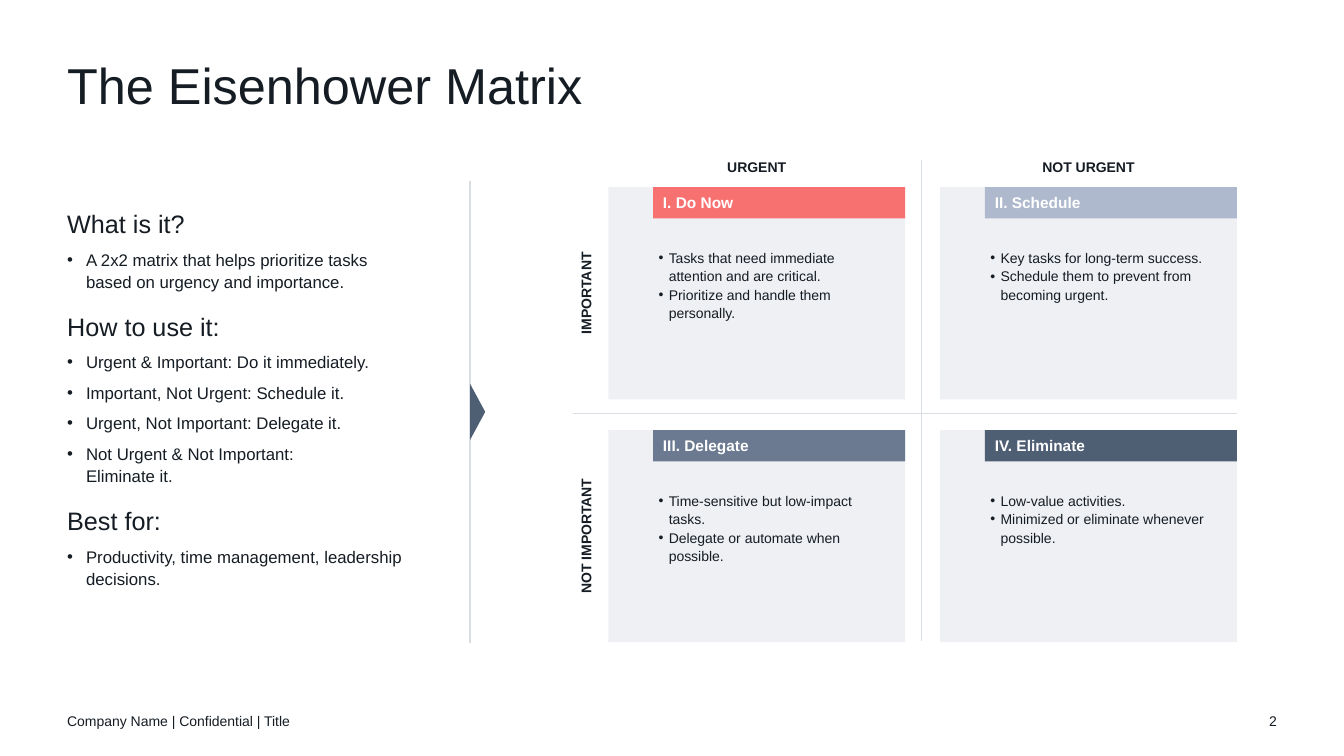
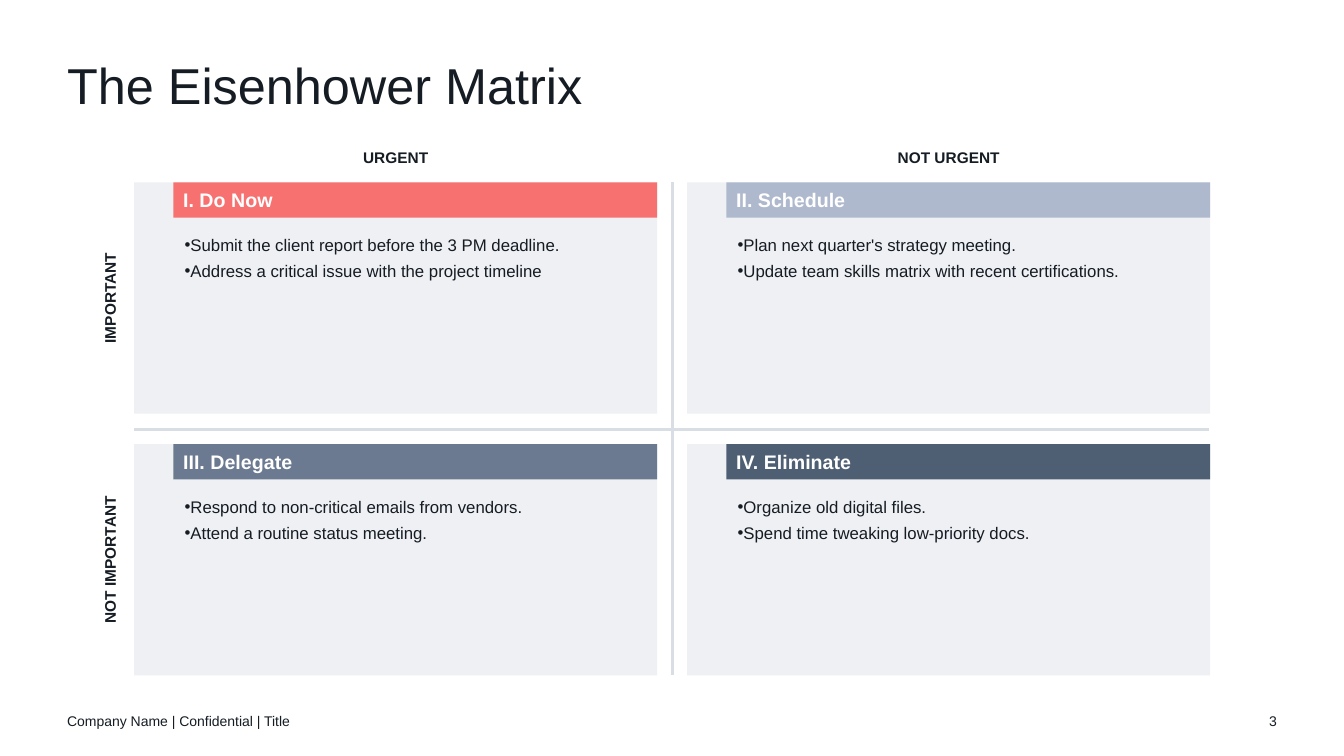
"""Build two Eisenhower Matrix slides: an overview and a worked example."""
from copy import deepcopy

from lxml import etree
from pptx import Presentation
from pptx.dml.color import RGBColor
from pptx.enum.shapes import MSO_CONNECTOR, MSO_SHAPE
from pptx.enum.text import MSO_ANCHOR, PP_ALIGN
from pptx.oxml.ns import qn
from pptx.util import Pt

INK = RGBColor(0x15, 0x1C, 0x23)
WHITE = RGBColor(0xFF, 0xFF, 0xFF)
PANEL = RGBColor(0xEE, 0xF0, 0xF4)
RULE = RGBColor(0xD9, 0xDE, 0xE5)
CORAL = RGBColor(0xF8, 0x71, 0x71)
MIST = RGBColor(0xAF, 0xB9, 0xCD)
SLATE = RGBColor(0x6B, 0x7A, 0x90)
NAVY = RGBColor(0x4E, 0x5E, 0x73)

RECT, TRIANGLE = MSO_SHAPE.RECTANGLE, MSO_SHAPE.ISOSCELES_TRIANGLE
STRAIGHT = MSO_CONNECTOR.STRAIGHT
TOP, MIDDLE = MSO_ANCHOR.TOP, MSO_ANCHOR.MIDDLE
LEFT, CENTER, RIGHT = PP_ALIGN.LEFT, PP_ALIGN.CENTER, PP_ALIGN.RIGHT

FONT = "Arial"
TITLE = "The Eisenhower Matrix"
FOOTER = "Company Name | Confidential | Title"
MARGIN = 48
QUADRANTS = [("I. Do Now", CORAL), ("II. Schedule", MIST),
             ("III. Delegate", SLATE), ("IV. Eliminate", NAVY)]
COLUMNS = ["URGENT", "NOT URGENT"]
ROWS = ["IMPORTANT", "NOT IMPORTANT"]

HEAD = {"size": 18, "para": {"line_spacing": 1.1, "space_before": Pt(12)}}
ITEM = {"size": 12, "bullet": (13.5, -13.5),
        "para": {"line_spacing": 1.1, "space_before": Pt(6)}}
GUIDE = [
    ("What is it?", HEAD),
    ("A 2x2 matrix that helps prioritize tasks based on urgency and importance.", ITEM),
    ("How to use it:", HEAD),
    ("Urgent & Important: Do it immediately.", ITEM),
    ("Important, Not Urgent: Schedule it.", ITEM),
    ("Urgent, Not Important: Delegate it.", ITEM),
    ("Not Urgent & Not Important:\vEliminate it.", ITEM),
    ("Best for:", HEAD),
    ("Productivity, time management, leadership decisions.", ITEM),
]

SLIDES = [
    {
        "number": 2, "origin": (434.5, 133.7), "cell": (212, 151.5), "pitch": (237, 173.5),
        "bar": (180, 22.3), "bar_size": 11, "label_size": 10, "column_y": 113, "row_x": 418.5,
        "rules": [(658.3, 114.5, 658.3, 458, 1), (409, 295.4, 883.5, 295.4, 1),
                  (335.6, 129.6, 335.6, 459.4, 1)],
        "insets": (36, 43.2, 14.4, 3.6),
        "item": {"size": 10, "bullet": (7.2, -7.2), "para": {"line_spacing": 1.1}},
        "items": [
            ["Tasks that need immediate attention and are critical.",
             "Prioritize and handle them personally."],
            ["Key tasks for long-term success.",
             "Schedule them to prevent from becoming urgent."],
            ["Time-sensitive but low-impact tasks.",
             "Delegate or automate when possible."],
            ["Low-value activities.",
             "Minimized or eliminate whenever possible."],
        ],
        "guide": GUIDE,
    },
    {
        "number": 3, "origin": (95.9, 130.2), "cell": (373.6, 165.3), "pitch": (395, 187),
        "bar": (345.7, 25.3), "bar_size": 14, "label_size": 11, "column_y": 106, "row_x": 78.5,
        "rules": [(480.2, 130.2, 480.2, 482.5, 2), (95.9, 306.7, 863.5, 306.7, 2)],
        "insets": (36, 36, 7.2, 3.6),
        "item": {"size": 12, "bullet": (0, -7.2),
                 "para": {"line_spacing": 1.1, "space_after": Pt(3)}},
        "items": [
            ["Submit the client report before the 3 PM deadline.",
             "Address a critical issue with the project timeline"],
            ["Plan next quarter's strategy meeting.",
             "Update team skills matrix with recent certifications."],
            ["Respond to non-critical emails from vendors.",
             "Attend a routine status meeting."],
            ["Organize old digital files.",
             "Spend time tweaking low-priority docs."],
        ],
        "guide": [],
    },
]


def write(sp, items, insets=(0, 0, 0, 0), anchor=TOP, align=LEFT, color=INK, bold=False):
    """Fill a shape with (text, style) paragraphs."""
    tf = sp.text_frame
    frame = dict(zip(("margin_left", "margin_top", "margin_right", "margin_bottom"),
                     map(Pt, insets)), word_wrap=True, vertical_anchor=anchor)
    for name, value in frame.items():
        setattr(tf, name, value)
    for i, (text, style) in enumerate(items):
        p = tf.paragraphs[0] if i == 0 else tf.add_paragraph()
        p.text = text
        p.alignment = align
        if "bullet" in style:
            pPr = p._p.get_or_add_pPr()
            for name, value in zip(("marL", "indent"), style["bullet"]):
                pPr.set(name, str(int(Pt(value))))
            etree.SubElement(pPr, qn("a:buFont")).set("typeface", FONT)
            etree.SubElement(pPr, qn("a:buChar")).set("char", "•")
        for name, value in style.get("para", {}).items():
            if i or name != "space_before":
                setattr(p, name, value)
        for r in p.runs:
            for name, value in {"name": FONT, "size": Pt(style["size"]), "bold": bold}.items():
                setattr(r.font, name, value)
            r.font.color.rgb = color
        for br in p._p.findall(qn("a:br")):
            br.insert(0, deepcopy(p.runs[0]._r.rPr))


def add_box(s, at, fill=None, kind=RECT):
    """Add a plain filled shape, or a text box when there is no fill."""
    at = [Pt(v) for v in at]
    if fill is None:
        return s.shapes.add_textbox(*at)
    sp = s.shapes.add_shape(kind, *at)
    sp.shadow.inherit = False
    sp.fill.solid()
    sp.fill.fore_color.rgb = fill
    sp.line.fill.background()
    return sp


prs = Presentation()
prs.slide_width, prs.slide_height = Pt(960), Pt(540)

for data in SLIDES:
    s = prs.slides.add_slide(prs.slide_layouts[5])
    title = s.shapes.title
    for name, value in {"left": MARGIN, "top": 43.2, "width": 864, "height": 43.2}.items():
        setattr(title, name, Pt(value))
    write(title, [(TITLE, {"size": 36, "para": {"line_spacing": 0.9}})])

    for text, x, w, align in [(FOOTER, MARGIN, 324, LEFT),
                              (str(data["number"]), 876, 36, RIGHT)]:
        write(add_box(s, (x, 500.4, w, 28.8)), [(text, {"size": 10})],
              anchor=MIDDLE, align=align)

    for x1, y1, x2, y2, weight in data["rules"]:
        line = s.shapes.add_connector(STRAIGHT, Pt(x1), Pt(y1), Pt(x2), Pt(y2))
        line.line.color.rgb = RULE
        line.line.width = Pt(weight)
        etree.SubElement(line._element.spPr, qn("a:effectLst"))

    (x0, y0), (w, h), (dx, dy) = data["origin"], data["cell"], data["pitch"]
    bar_w, bar_h = data["bar"]
    for i, (name, color) in enumerate(QUADRANTS):
        x, y = x0 + i % 2 * dx, y0 + i // 2 * dy
        write(add_box(s, (x, y, w, h), PANEL),
              [(text, data["item"]) for text in data["items"][i]], data["insets"])
        write(add_box(s, (x + w - bar_w, y, bar_w, bar_h), color),
              [(name, {"size": data["bar_size"]})], (7.2, 0, 7.2, 0),
              MIDDLE, color=WHITE, bold=True)

    label_w, label_h = 116, data["label_size"] * 1.2
    for i in range(2):
        column_x = x0 + i * dx + w / 2 - label_w / 2
        row_y = y0 + i * dy + h / 2 - label_h / 2
        for text, x, y, turn in [(COLUMNS[i], column_x, data["column_y"], 0),
                                 (ROWS[i], data["row_x"] - label_w / 2, row_y, 270)]:
            label = add_box(s, (x, y, label_w, label_h))
            label.rotation = turn
            write(label, [(text, {"size": data["label_size"]})], align=CENTER, bold=True)

    if data["guide"]:
        write(add_box(s, (MARGIN, 146.9, 244.8, 311.8)), data["guide"])
        pointer = add_box(s, (321.2, 288.8, 40, 10.8), NAVY, TRIANGLE)
        pointer.rotation = 90

prs.save("out.pptx")
